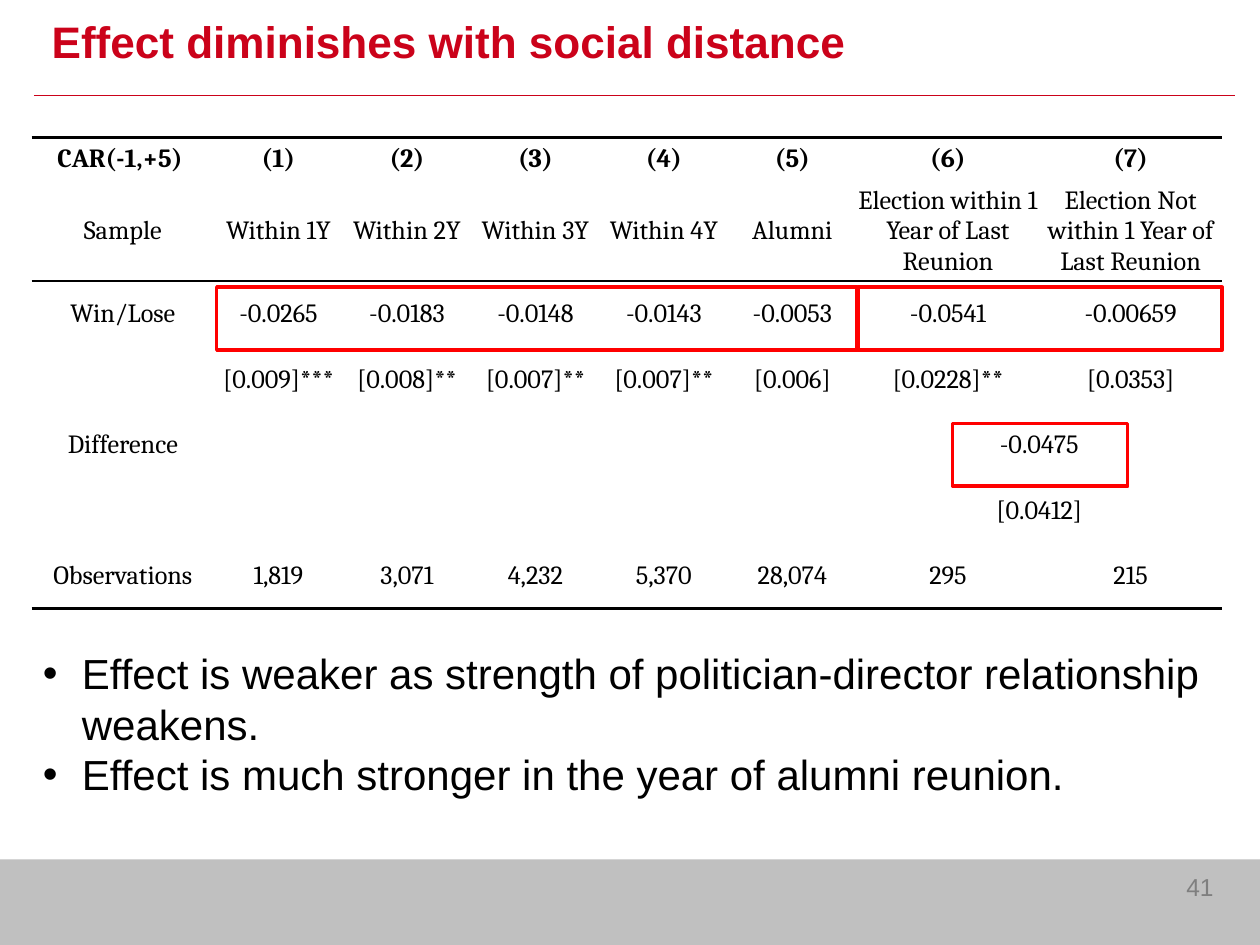
from pptx import Presentation
from pptx.dml.color import RGBColor
from pptx.enum.shapes import MSO_CONNECTOR, MSO_SHAPE
from pptx.enum.text import MSO_ANCHOR, MSO_AUTO_SIZE, PP_ALIGN
from pptx.oxml.ns import qn
from pptx.util import Inches, Pt
from lxml import etree

CRIMSON = RGBColor(0xCB, 0x02, 0x1A)
RED = RGBColor(0xFF, 0x00, 0x00)
BLACK = RGBColor(0x00, 0x00, 0x00)
GRAY = RGBColor(0x7F, 0x7F, 0x7F)
SILVER = RGBColor(0xC0, 0xC0, 0xC0)

COLUMN_WIDTHS = [1.45] + [1.02] * 5 + [1.45] * 2
ROW_HEIGHTS = [0.34, 0.8] + [0.52] * 5
RESULTS = [
    ["CAR(-1,+5)\u00a0", "(1)", "(2)", "(3)", "(4)", "(5)", "(6)", "(7)"],
    ["Sample", "Within 1Y", "Within 2Y", "Within 3Y", "Within 4Y", "Alumni",
     "Election within 1 Year of Last Reunion",
     "Election Not within 1 Year of Last Reunion"],
    ["Win/Lose", "-0.0265", "-0.0183", "-0.0148", "-0.0143", "-0.0053",
     "-0.0541", "-0.00659"],
    ["", "[0.009]***", "[0.008]**", "[0.007]**", "[0.007]**", "[0.006]",
     "[0.0228]**", "[0.0353]"],
    ["Difference", "", "", "", "", "", "-0.0475", ""],
    ["", "", "", "", "", "", "[0.0412]", ""],
    ["Observations", "1,819", "3,071", "4,232", "5,370", "28,074", "295", "215"],
]
MERGED_ROWS = (4, 5)
# Ruled edges of each row: edge tag -> width in points
RULES = {0: {"lnT": 2.25}, 1: {"lnB": 1}, 2: {"lnT": 1}, 6: {"lnB": 2.25}}
HIGHLIGHTS = [(1.72, 2.28, 5.08, 0.5), (6.81, 2.28, 2.89, 0.5),
              (7.56, 3.36, 1.39, 0.5)]
POINTS = [
    "Effect is weaker as strength of politician-director relationship weakens.",
    "Effect is much stronger in the year of alumni reunion.",
]


def place(shape, box):
    shape.left, shape.top, shape.width, shape.height = map(Inches, box)


def set_font(font, name, size, color, bold=False):
    font.name, font.size, font.bold = name, Pt(size), bold
    font.color.rgb = color


def add_title(slide, box):
    title = slide.shapes.title
    place(title, box)
    frame = title.text_frame
    frame.text = "Effect diminishes with social distance"
    frame.auto_size = MSO_AUTO_SIZE.NONE
    frame.vertical_anchor = MSO_ANCHOR.MIDDLE
    frame.paragraphs[0].alignment = PP_ALIGN.LEFT
    set_font(frame.paragraphs[0].runs[0].font, "Arial", 25.2, CRIMSON, True)


def add_title_rule(slide, left, right, y):
    rule = slide.shapes.add_connector(
        MSO_CONNECTOR.STRAIGHT, Inches(left), Inches(y), Inches(right), Inches(y))
    rule.line.color.rgb = CRIMSON
    rule.line.width = Pt(0.75)
    etree.SubElement(rule._element.spPr, qn("a:effectLst"))


def add_footer(slide, box, number_box):
    band = slide.shapes.add_shape(MSO_SHAPE.RECTANGLE, *map(Inches, box))
    band.shadow.inherit = False
    band.fill.solid()
    band.fill.fore_color.rgb = SILVER
    band.line.fill.background()

    number = slide.shapes.add_textbox(*map(Inches, number_box))
    number.text_frame.word_wrap = True
    number.text_frame.text = "41"
    paragraph = number.text_frame.paragraphs[0]
    paragraph.alignment = PP_ALIGN.RIGHT
    set_font(paragraph.runs[0].font, "Arial", 14, GRAY)


def set_borders(cell, rules):
    properties = cell._tc.get_or_add_tcPr()
    for tag in ("lnL", "lnR", "lnT", "lnB"):
        line = etree.SubElement(properties, qn(f"a:{tag}"))
        if tag in rules:
            line.set("w", str(Pt(rules[tag])))
            fill = etree.SubElement(line, qn("a:solidFill"))
            etree.SubElement(fill, qn("a:srgbClr")).set("val", str(BLACK))
        else:
            etree.SubElement(line, qn("a:noFill"))


def add_results_table(slide, box):
    table = slide.shapes.add_table(
        len(RESULTS), len(COLUMN_WIDTHS), *map(Inches, box)).table
    table.first_row = table.horz_banding = False
    for column, width in zip(table.columns, COLUMN_WIDTHS):
        column.width = Inches(width)
    for row, height in zip(table.rows, ROW_HEIGHTS):
        row.height = Inches(height)
    for r in MERGED_ROWS:
        table.cell(r, 6).merge(table.cell(r, 7))

    for r, row_texts in enumerate(RESULTS):
        for c, cell_text in enumerate(row_texts):
            cell = table.cell(r, c)
            set_borders(cell, RULES.get(r, {}))
            cell.fill.background()
            cell.margin_left = cell.margin_right = cell.margin_top = Inches(0.01)
            cell.margin_bottom = 0
            cell.vertical_anchor = MSO_ANCHOR.MIDDLE
            cell.text_frame.text = cell_text
            paragraph = cell.text_frame.paragraphs[0]
            paragraph.alignment = PP_ALIGN.CENTER
            for run in paragraph.runs:
                set_font(run.font, "Cambria", 15, BLACK, r == 0)


def add_highlight(slide, box):
    frame = slide.shapes.add_shape(MSO_SHAPE.RECTANGLE, *map(Inches, box))
    frame.shadow.inherit = False
    frame.fill.background()
    frame.line.color.rgb = RED
    frame.line.width = Pt(2)


def add_points(slide, box):
    body = slide.placeholders[1]
    place(body, box)
    frame = body.text_frame
    frame.text = "\n".join(POINTS)
    frame.auto_size = MSO_AUTO_SIZE.NONE
    for paragraph in frame.paragraphs:
        properties = paragraph._p.get_or_add_pPr()
        properties.set("marL", str(Inches(0.31)))
        properties.set("indent", str(Inches(-0.31)))
        etree.SubElement(properties, qn("a:buChar")).set("char", "•")
        paragraph.space_before = Pt(0)
        set_font(paragraph.runs[0].font, "Arial", 24, BLACK)


def main():
    presentation = Presentation()
    presentation.slide_width = Inches(10)
    presentation.slide_height = Inches(7.5)
    slide = presentation.slides.add_slide(presentation.slide_layouts[1])

    add_footer(slide, (0, 6.82, 10, 0.68), (8.94, 6.87, 0.79, 0.5))
    add_title_rule(slide, 0.27, 9.8, 0.76)
    add_title(slide, (0.31, 0.05, 9.25, 0.55))
    add_points(slide, (0.24, 5.09, 9.42, 1.3))
    add_results_table(slide, (0.25, 1.09, 9.45, 3.72))
    for box in HIGHLIGHTS:
        add_highlight(slide, box)

    presentation.save("out.pptx")


if __name__ == "__main__":
    main()
